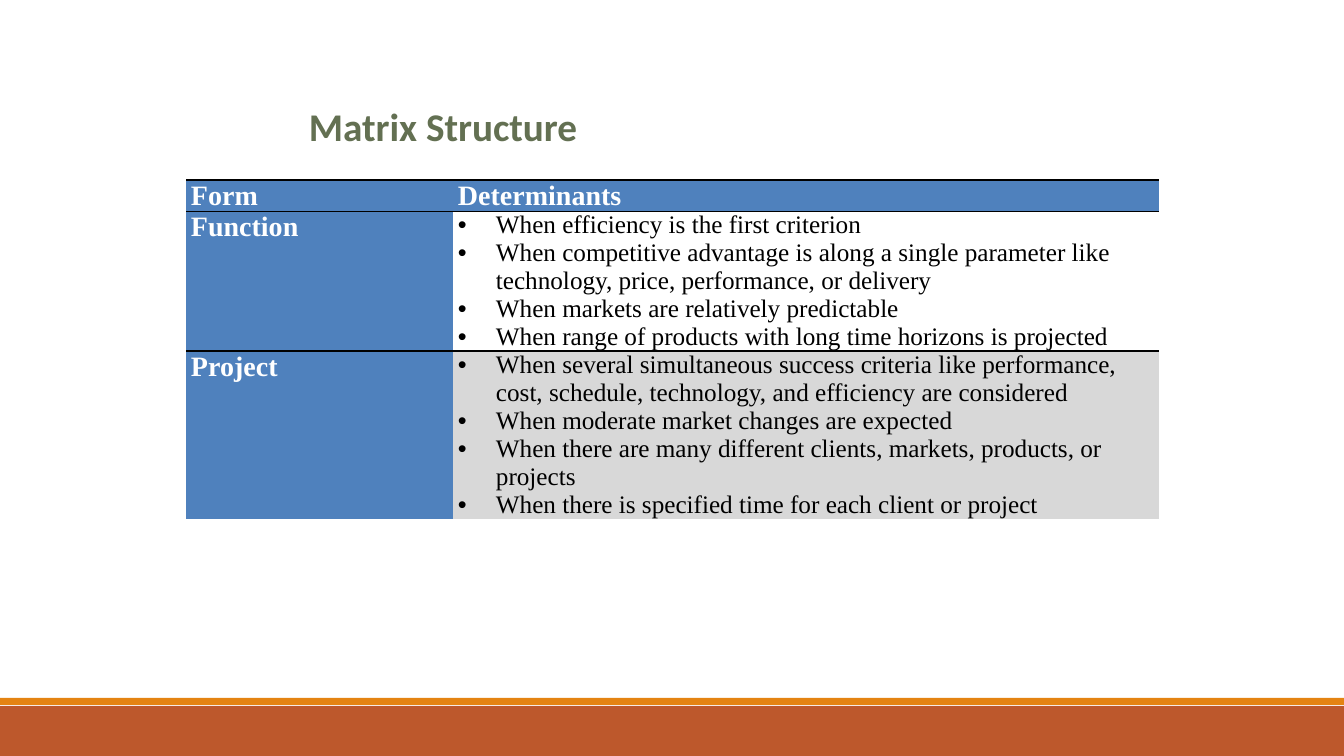
from lxml import etree
from pptx import Presentation
from pptx.dml.color import RGBColor
from pptx.enum.shapes import MSO_SHAPE
from pptx.enum.text import MSO_ANCHOR, MSO_AUTO_SIZE, PP_ALIGN
from pptx.oxml.ns import qn
from pptx.util import Emu, Pt

RECTANGLE = MSO_SHAPE.RECTANGLE
TOP = MSO_ANCHOR.TOP
LEFT = PP_ALIGN.LEFT
NO_AUTOFIT = MSO_AUTO_SIZE.NONE

RUST = RGBColor(0xBD, 0x58, 0x2C)
ORANGE = RGBColor(0xE4, 0x83, 0x12)
OLIVE = RGBColor(0x63, 0x70, 0x52)
BLUE = RGBColor(0x4F, 0x81, 0xBD)
GREY = RGBColor(0xD8, 0xD8, 0xD8)
WHITE = RGBColor(0xFF, 0xFF, 0xFF)
BLACK = RGBColor(0x00, 0x00, 0x00)

PLAIN_TABLE_STYLE = "{2D5ABB26-0587-4C30-8999-92F81FD0307C}"
SLIDE_WIDTH, SLIDE_HEIGHT = 1344, 756
EMU_PER_PX = 12192000 / SLIDE_WIDTH


def px(length):
    return Emu(round(length * EMU_PER_PX))


def write_text(frame, lines, size, color, font="Times New Roman", bold=False, bullet_indent=0):
    """Fill a text frame with one left-aligned paragraph per line."""
    for index, line in enumerate(lines):
        paragraph = frame.paragraphs[0] if index == 0 else frame.add_paragraph()
        paragraph.alignment = LEFT
        run = paragraph.add_run()
        run.text = line
        run.font.name = font
        run.font.size = Pt(size)
        run.font.bold = bold
        run.font.color.rgb = color
        if bullet_indent:
            properties = paragraph._p.get_or_add_pPr()
            properties.set("marL", str(px(bullet_indent)))
            properties.set("indent", str(px(-bullet_indent)))
            etree.SubElement(properties, qn("a:buFont"), typeface="Arial")
            etree.SubElement(properties, qn("a:buChar"), char="•")


presentation = Presentation()
presentation.slide_width = px(SLIDE_WIDTH)
presentation.slide_height = px(SLIDE_HEIGHT)
slide = presentation.slides.add_slide(presentation.slide_layouts[5])

# Footer bands
for top, height, color in [(706, 50, RUST), (698, 7, ORANGE)]:
    band = slide.shapes.add_shape(RECTANGLE, 0, px(top), px(SLIDE_WIDTH), px(height))
    band.shadow.inherit = False
    band.fill.solid()
    band.fill.fore_color.rgb = color
    band.line.fill.background()

# Title
title = slide.shapes.title
title.left, title.top, title.width, title.height = px(299), px(103), px(432), px(37)
title_frame = title.text_frame
title_frame.auto_size = NO_AUTOFIT
title_frame.vertical_anchor = TOP
title_frame.margin_left, title_frame.margin_right = px(10), 0
title_frame.margin_top = title_frame.margin_bottom = px(5)
write_text(title_frame, ["Matrix Structure"], 28, OLIVE, font="Calibri", bold=True)
title_frame.paragraphs[0].line_spacing = 0.9

# Table of forms and their determinants
rows = [
    ("Form", ["Determinants"]),
    ("Function", [
        "When efficiency is the first criterion",
        "When competitive advantage is along a single parameter like technology, price, performance, or delivery",
        "When markets are relatively predictable",
        "When range of products with long time horizons is projected",
    ]),
    ("Project", [
        "When several simultaneous success criteria like performance, cost, schedule, technology, and efficiency are considered",
        "When moderate market changes are expected",
        "When there are many different clients, markets, products, or projects",
        "When there is specified time for each client or project",
    ]),
]
column_widths = [267, 706]
row_heights = [31, 140, 167]
table = slide.shapes.add_table(
    len(rows), len(column_widths), px(186), px(180), px(sum(column_widths)), px(sum(row_heights))
).table
table.first_row = table.horz_banding = False
table._tbl.tblPr.find(qn("a:tableStyleId")).text = PLAIN_TABLE_STYLE
for column, width in zip(table.columns, column_widths):
    column.width = px(width)
for row, height in zip(table.rows, row_heights):
    row.height = px(height)

for row_index, (form, determinants) in enumerate(rows):
    for column_index, lines in enumerate([[form], determinants]):
        cell = table.cell(row_index, column_index)
        cell.margin_left = cell.margin_right = px(5)
        cell.margin_top = cell.margin_bottom = 0
        cell.vertical_anchor = TOP
        is_heading = row_index == 0 or column_index == 0
        if is_heading:
            write_text(cell.text_frame, lines, 20, WHITE, bold=True)
        else:
            write_text(cell.text_frame, lines, 18, BLACK, bullet_indent=38)

        if is_heading or row_index == 2:
            cell.fill.solid()
            cell.fill.fore_color.rgb = BLUE if is_heading else GREY
        else:
            cell.fill.background()

        # Black rules above and below the header row
        edges = [["a:lnT", "a:lnB"], ["a:lnT"], []][row_index]
        for position, edge in enumerate(edges):
            border = etree.Element(qn(edge), w=str(Pt(1)))
            border_fill = etree.SubElement(border, qn("a:solidFill"))
            etree.SubElement(border_fill, qn("a:srgbClr"), val=str(BLACK))
            cell._tc.get_or_add_tcPr().insert(position, border)

presentation.save("out.pptx")
